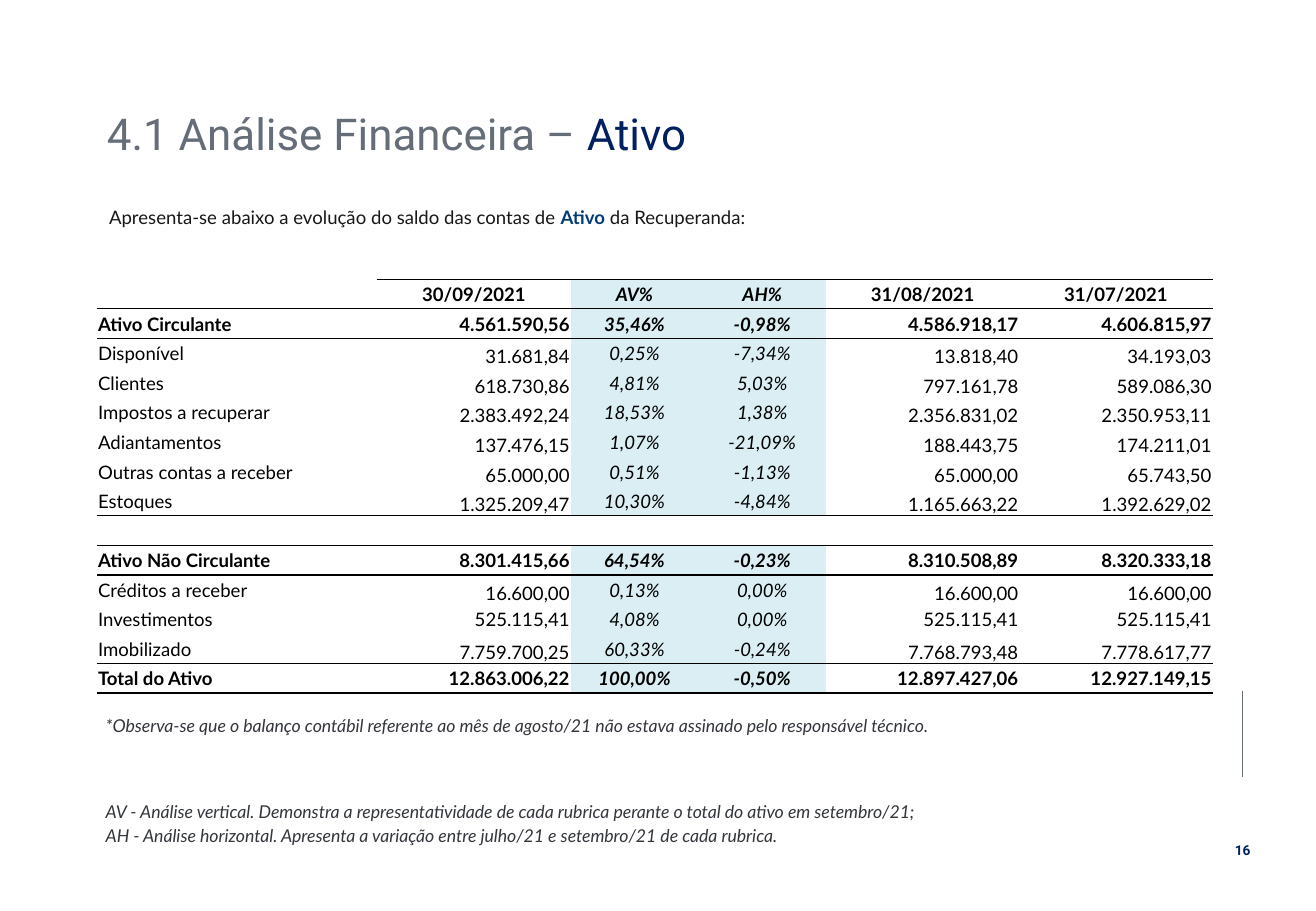
import lxml.etree
import pptx
import pptx.dml.color
import pptx.enum.shapes
import pptx.enum.text
import pptx.oxml.ns
import pptx.util

Cm, Pt = pptx.util.Cm, pptx.util.Pt
qn = pptx.oxml.ns.qn
ALIGN = pptx.enum.text.PP_ALIGN
ANCHOR = pptx.enum.text.MSO_ANCHOR

NAVY, BLUE, GREY = "002060", "033C75", "656D78"
BLACK, DARK, NOTE, PALE, WHITE = "000000", "181717", "33363C", "DAEEF3", "FFFFFF"

COL_WIDTHS = [5.86, 4.04, 2.67, 2.67, 4.04, 4.04]
COL_ALIGN = [ALIGN.LEFT, ALIGN.RIGHT, ALIGN.CENTER, ALIGN.CENTER, ALIGN.RIGHT, ALIGN.RIGHT]
PERCENT_COLS = (2, 3)
ROWS = [
    ["", "30/09/2021", "AV%", "AH%", "31/08/2021", "31/07/2021"],
    ["Ativo Circulante", "4.561.590,56", "35,46%", "-0,98%", "4.586.918,17", "4.606.815,97"],
    ["Disponível", "31.681,84", "0,25%", "-7,34%", "13.818,40", "34.193,03"],
    ["Clientes", "618.730,86", "4,81%", "5,03%", "797.161,78", "589.086,30"],
    ["Impostos a recuperar", "2.383.492,24", "18,53%", "1,38%", "2.356.831,02", "2.350.953,11"],
    ["Adiantamentos", "137.476,15", "1,07%", "-21,09%", "188.443,75", "174.211,01"],
    ["Outras contas a receber", "65.000,00", "0,51%", "-1,13%", "65.000,00", "65.743,50"],
    ["Estoques", "1.325.209,47", "10,30%", "-4,84%", "1.165.663,22", "1.392.629,02"],
    [""] * 6,
    ["Ativo Não Circulante", "8.301.415,66", "64,54%", "-0,23%", "8.310.508,89", "8.320.333,18"],
    ["Créditos a receber", "16.600,00", "0,13%", "0,00%", "16.600,00", "16.600,00"],
    ["Investimentos", "525.115,41", "4,08%", "0,00%", "525.115,41", "525.115,41"],
    ["Imobilizado", "7.759.700,25", "60,33%", "-0,24%", "7.768.793,48", "7.778.617,77"],
    ["Total do Ativo", "12.863.006,22", "100,00%", "-0,50%", "12.897.427,06", "12.927.149,15"],
]
BOLD_ROWS = (0, 1, 9, 13)
MIDDLE_ROWS = BOLD_ROWS + (11,)
# Rule width in points above each row; the last key is the table's bottom
RULES = {0: 0.5, 1: 0.5, 2: 1, 8: 0.5, 9: 0.5, 10: 1, 13: 0.5, 14: 1}
NO_STYLE = "{2D5ABB26-0587-4C30-8999-92F81FD0307C}"


def rgb(value):
    return pptx.dml.color.RGBColor.from_string(value)


def set_all(obj, values):
    for name, value in values.items():
        setattr(obj, name, value)


def add_run(p, text, color, **font):
    r = p.add_run()
    r.text = text
    set_all(r.font, font)
    r.font.color.rgb = rgb(color)


def add_title(s, box):
    sp = s.shapes.title
    set_all(sp, dict(zip(("left", "top", "width", "height"), map(Cm, box))))
    set_all(sp.text_frame, {"word_wrap": True, "vertical_anchor": ANCHOR.MIDDLE,
                            "auto_size": pptx.enum.text.MSO_AUTO_SIZE.NONE})
    p = sp.text_frame.paragraphs[0]
    set_all(p, {"alignment": ALIGN.LEFT, "line_spacing": 0.9})
    for text, color in [("4.1 Análise Financeira – ", GREY), ("Ativo", NAVY)]:
        add_run(p, text, color, name="Roboto", size=Pt(26))


def add_intro(s, box):
    tf = s.shapes.add_textbox(*map(Cm, box)).text_frame
    tf.word_wrap = True
    p = tf.paragraphs[0]
    set_all(p, {"alignment": ALIGN.JUSTIFY, "line_spacing": 1.5})
    for text, color, bold in [
        ("Apresenta-se abaixo a evolução do saldo das contas de ", DARK, False),
        ("Ativo", BLUE, True),
        (" da Recuperanda:", DARK, False),
    ]:
        add_run(p, text, color, name="Lato", size=Pt(11), bold=bold)


def add_border(cell, side, width):
    tc_pr = cell._tc.get_or_add_tcPr()
    ln = lxml.etree.SubElement(tc_pr, qn("a:" + side), w=str(Pt(width or 0)))
    if width:
        fill = lxml.etree.SubElement(ln, qn("a:solidFill"))
        lxml.etree.SubElement(fill, qn("a:srgbClr"), val=BLACK)
    else:
        lxml.etree.SubElement(ln, qn("a:noFill"))


def fill_cell(cell, row, col):
    text = ROWS[row][col]
    percent = col in PERCENT_COLS
    item_value = col and not percent and row not in MIDDLE_ROWS
    set_all(cell, {"margin_left": Cm(0.02), "margin_right": Cm(0.02),
                   "margin_top": Cm(0.02), "margin_bottom": 0,
                   "vertical_anchor": ANCHOR.BOTTOM if item_value else ANCHOR.MIDDLE})
    # Rules, with the top-left corner left open
    for side, edge in (("lnT", row), ("lnB", row + 1)):
        open_corner = edge == 0 and col == 0
        add_border(cell, side, None if open_corner else RULES.get(edge))
    if percent and text:
        cell.fill.solid()
        cell.fill.fore_color.rgb = rgb(PALE)
    else:
        cell.fill.background()
    # Text
    p = cell.text_frame.paragraphs[0]
    p.alignment = COL_ALIGN[col] if row else ALIGN.CENTER
    if text:
        add_run(p, text, BLACK, name="Lato", size=Pt(11),
                bold=row in BOLD_ROWS, italic=percent)
    else:
        lxml.etree.SubElement(p._p, qn("a:endParaRPr"), sz="1100")


def add_balance_table(s, box):
    frame = s.shapes.add_table(len(ROWS), len(COL_WIDTHS), *map(Cm, box))
    table = frame.table
    set_all(table, {"first_row": False, "horz_banding": False})
    table._tbl.tblPr.find(qn("a:tableStyleId")).text = NO_STYLE
    for column, width in zip(table.columns, COL_WIDTHS):
        column.width = Cm(width)
    for row, table_row in enumerate(table.rows):
        table_row.height = Cm(box[3] / len(ROWS))
        for col, cell in enumerate(table_row.cells):
            fill_cell(cell, row, col)


def add_note(s, box, lines):
    sp = s.shapes.add_shape(pptx.enum.shapes.MSO_SHAPE.RECTANGLE, *map(Cm, box))
    sp.shadow.inherit = False
    sp.fill.solid()
    sp.fill.fore_color.rgb = rgb(WHITE)
    sp.line.fill.background()
    tf = sp.text_frame
    set_all(tf, {"word_wrap": True, "vertical_anchor": ANCHOR.MIDDLE})
    for i, line in enumerate(lines):
        p = tf.add_paragraph() if i else tf.paragraphs[0]
        set_all(p, {"alignment": ALIGN.JUSTIFY, "line_spacing": 1.14})
        set_all_xml = p._p.get_or_add_pPr().set
        set_all_xml("marL", "0")
        set_all_xml("indent", str(Cm(0.79)))
        add_run(p, line, NOTE, name="Lato", size=Pt(10.5), italic=True)


def add_page_mark(s, box):
    left, top, width, height = box
    # Vertical rule above the page number
    x = Cm(left + width / 2)
    line = s.shapes.add_connector(pptx.enum.shapes.MSO_CONNECTOR.STRAIGHT,
                                  x, Cm(top), x, Cm(top + 1.8))
    line.line.color.rgb = rgb(GREY)
    line.line.width = Pt(0.5)
    lxml.etree.SubElement(line._element.spPr, qn("a:effectLst"))
    # Page number
    tf = s.shapes.add_textbox(Cm(left), Cm(top + height - 0.61), Cm(width), Cm(0.61)).text_frame
    tf.word_wrap = False
    p = tf.paragraphs[0]
    p.alignment = ALIGN.CENTER
    add_run(p, "16", NAVY, name="Roboto", size=Pt(8.1), bold=True)


def main():
    prs = pptx.Presentation()
    set_all(prs, {"slide_width": Cm(27.51), "slide_height": Cm(19.05)})
    s = prs.slides.add_slide(prs.slide_layouts[5])
    add_page_mark(s, (25.55, 14.45, 0.86, 3.64))
    add_balance_table(s, (2.03, 5.84, sum(COL_WIDTHS), 8.66))
    add_title(s, (1.98, 2.18, 20.78, 1.35))
    add_intro(s, (2.03, 3.94, 22.1, 0.89))
    add_note(s, (1.17, 16.56, 22.1, 1.27), [
        "AV - Análise vertical. Demonstra a representatividade de cada rubrica "
        "perante o total do ativo em setembro/21;",
        "AH - Análise horizontal. Apresenta a variação entre julho/21 e "
        "setembro/21 de cada rubrica.",
    ])
    add_note(s, (1.17, 14.76, 22.1, 0.74), [
        "*Observa-se que o balanço contábil referente ao mês de agosto/21 "
        "não estava assinado pelo responsável técnico.",
    ])
    prs.save("out.pptx")


if __name__ == "__main__":
    main()
